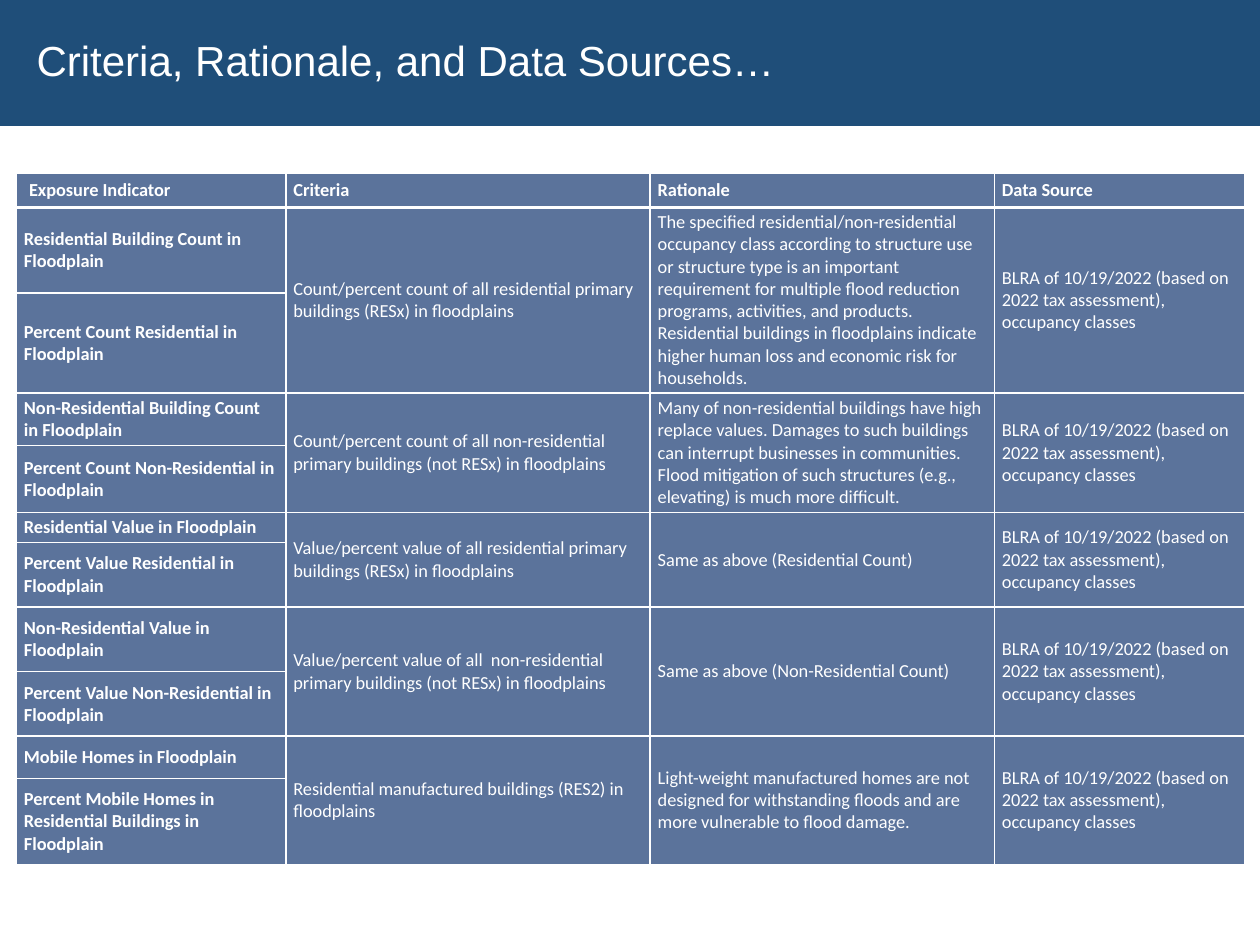
from dataclasses import dataclass

from lxml import etree
from pptx import Presentation
from pptx import util as u
from pptx.dml import color
from pptx.enum import text as t
from pptx.oxml import ns


@dataclass(frozen=True)
class Theme:
    banner: str = "1F4E79"
    cell: str = "5B739B"
    light: str = "FFFFFF"
    title_font: str = "Arial"
    table_font: str = "Calibri"
    title_size: float = 24
    table_size: float = 10.5
    thin: float = 1
    thick: float = 2.25


THEME = Theme()
COLUMN_WIDTHS = [154, 208.2, 196.7, 143.1]
ROW_HEIGHTS = [19.7, 48.9, 57.1, 29.7, 38.3, 17, 37, 36.9, 36.9, 24.3, 49.1]
HEADINGS = ["Exposure Indicator", "Criteria", "Rationale", "Data Source"]
SOURCE = "BLRA of 10/19/2022 (based on 2022 tax assessment), occupancy classes"
GROUPS = [
    (
        ["Residential Building Count in Floodplain",
         "Percent Count Residential in Floodplain"],
        "Count/percent count of all residential primary buildings (RESx) in floodplains",
        "The specified residential/non-residential occupancy class according to "
        "structure use or structure type is an important requirement for multiple "
        "flood reduction programs, activities, and products. Residential buildings "
        "in floodplains indicate higher human loss and economic risk for households.",
    ),
    (
        ["Non-Residential Building Count in Floodplain",
         "Percent Count Non-Residential in Floodplain"],
        "Count/percent count of all non-residential primary buildings (not RESx) in floodplains",
        "Many of non-residential buildings have high replace values. Damages to such "
        "buildings can interrupt businesses in communities. Flood mitigation of such "
        "structures (e.g., elevating) is much more difficult.",
    ),
    (
        ["Residential Value in Floodplain",
         "Percent Value Residential in Floodplain"],
        "Value/percent value of all residential primary buildings (RESx) in floodplains",
        "Same as above (Residential Count)",
    ),
    (
        ["Non-Residential Value in Floodplain",
         "Percent Value Non-Residential in Floodplain"],
        "Value/percent value of all  non-residential primary buildings (not RESx) in floodplains",
        "Same as above (Non-Residential Count)",
    ),
    (
        ["Mobile Homes in Floodplain",
         "Percent Mobile Homes in Residential Buildings in Floodplain"],
        "Residential manufactured buildings (RES2) in floodplains",
        "Light-weight manufactured homes are not designed for withstanding floods "
        "and are more vulnerable to flood damage.",
    ),
]


def write_text(frame, text, *, font, size, bold=False, line_spacing=None):
    para = frame.paragraphs[0]
    para.alignment = t.PP_ALIGN.LEFT
    para.line_spacing = line_spacing
    span = para.add_run()
    span.text = text
    span.font.name = font
    span.font.size = u.Pt(size)
    span.font.bold = bold
    span.font.color.rgb = color.RGBColor.from_string(THEME.light)


def paint(item, value):
    item.fill.solid()
    item.fill.fore_color.rgb = color.RGBColor.from_string(value)


def add_banner(page, width, text):
    title = page.shapes.title
    title.left, title.top, title.width, title.height = 0, 0, width, u.Pt(72)
    paint(title, THEME.banner)
    frame = title.text_frame
    frame.auto_size = t.MSO_AUTO_SIZE.NONE
    frame.vertical_anchor = t.MSO_ANCHOR.MIDDLE
    frame.margin_left = u.Pt(20.9)
    write_text(frame, text, font=THEME.title_font, size=THEME.title_size, line_spacing=0.9)


def set_borders(cell, **widths):
    properties = cell._tc.get_or_add_tcPr()
    for side in "LRTB":
        width = widths.get(side, THEME.thin)
        line = etree.SubElement(properties, ns.qn(f"a:ln{side}"), w=str(u.Pt(width)))
        fill = etree.SubElement(line, ns.qn("a:solidFill"))
        etree.SubElement(fill, ns.qn("a:srgbClr"), val=THEME.light)


def style_cell(cell, row):
    edges = {0: {"B": THEME.thick}, 1: {"T": THEME.thick}}.get(row, {})
    set_borders(cell, **edges)
    paint(cell, THEME.cell)
    cell.vertical_anchor = t.MSO_ANCHOR.MIDDLE
    cell.margin_left = cell.margin_right = u.Pt(4.3)
    cell.margin_top = cell.margin_bottom = u.Pt(2.2)


def fill_cell(cell, text, bold=False):
    write_text(cell.text_frame, text, font=THEME.table_font, size=THEME.table_size, bold=bold)


def add_criteria_table(page):
    frame = page.shapes.add_table(
        len(ROW_HEIGHTS), len(COLUMN_WIDTHS), u.Pt(9.4), u.Pt(98.8),
        u.Pt(sum(COLUMN_WIDTHS)), u.Pt(sum(ROW_HEIGHTS)),
    )
    table = frame.table
    table.first_row = table.horz_banding = False
    for column, width in zip(table.columns, COLUMN_WIDTHS):
        column.width = u.Pt(width)
    for index, (row, height) in enumerate(zip(table.rows, ROW_HEIGHTS)):
        row.height = u.Pt(height)
        for cell in row.cells:
            style_cell(cell, index)

    for column, heading in enumerate(HEADINGS):
        fill_cell(table.cell(0, column), heading, bold=True)
    table.cell(0, 0).margin_left = u.Pt(7.2)

    for group, (indicators, criteria, rationale) in enumerate(GROUPS):
        first = 1 + 2 * group
        for offset, indicator in enumerate(indicators):
            fill_cell(table.cell(first + offset, 0), indicator, bold=True)
        for column, text in enumerate([criteria, rationale, SOURCE], start=1):
            cell = table.cell(first, column)
            cell.merge(table.cell(first + 1, column))
            fill_cell(cell, text)


def main():
    deck = Presentation()
    deck.slide_width, deck.slide_height = u.Pt(720), u.Pt(540)
    page = deck.slides.add_slide(deck.slide_layouts[5])
    add_banner(page, deck.slide_width, "Criteria, Rationale, and Data Sources…")
    add_criteria_table(page)
    deck.save("out.pptx")


if __name__ == "__main__":
    main()
